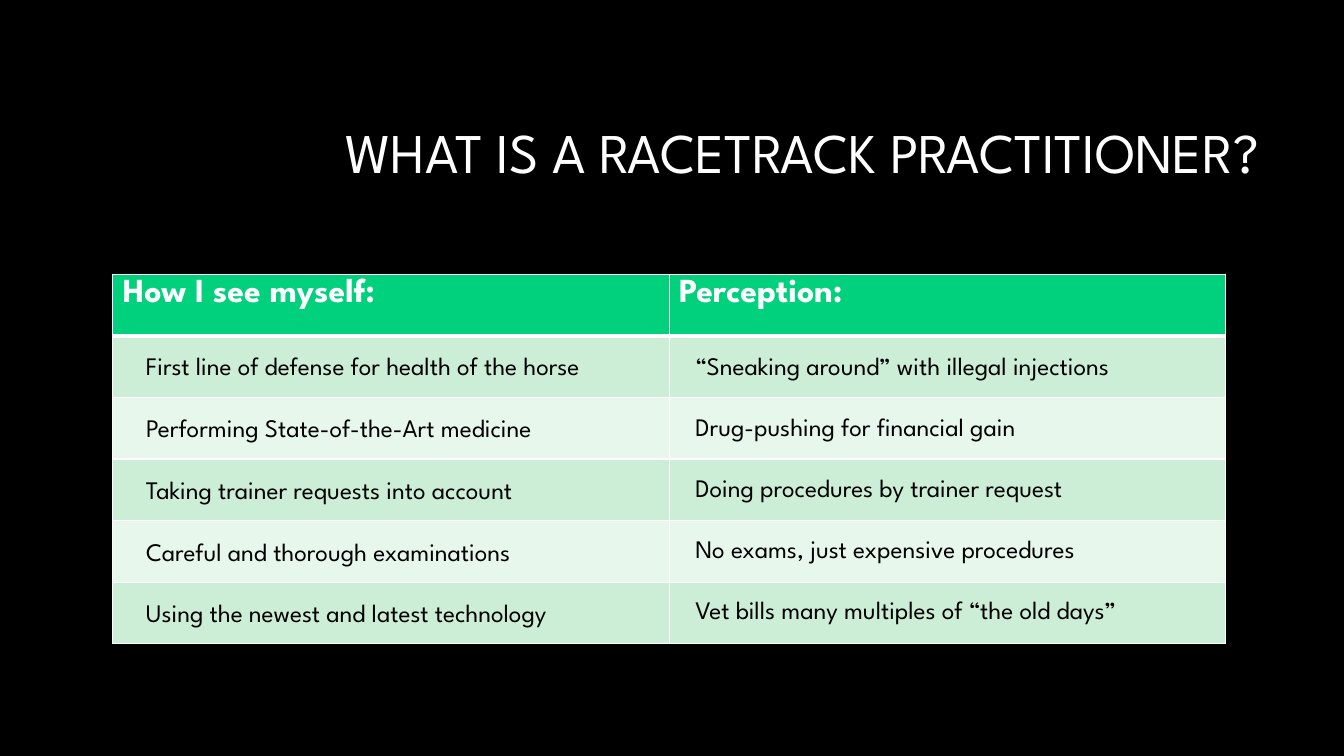
from pptx import Presentation
from pptx import util as u
from pptx.dml.color import RGBColor
from pptx.enum import text
from pptx.oxml import parse_xml
from pptx.oxml.ns import nsdecls

FONT = "League Spartan"
BLACK = RGBColor(0x00, 0x00, 0x00)
WHITE = RGBColor(0xFF, 0xFF, 0xFF)
GREEN = RGBColor(0x01, 0xD1, 0x7D)
BANDS = [RGBColor(0xCC, 0xEE, 0xD7), RGBColor(0xE7, 0xF7, 0xEC)]

HEADINGS = ["How I see myself:", "Perception:"]
ROWS = 6

# Each statement with the width of its label
MYSELF = [
    ("First line of defense for health of the horse", 379.5),
    ("Performing State-of-the-Art medicine", 339),
    ("Taking trainer requests into account", 329),
    ("Careful and thorough examinations", 328.5),
    ("Using the newest and latest technology", 363),
]
PERCEPTION = [
    ("“Sneaking around” with illegal injections", 366.5),
    ("Drug-pushing for financial gain", 284.5),
    ("Doing procedures by trainer request", 332.5),
    ("No exams, just expensive procedures", 340),
    ("Vet bills many multiples of “the old days”", 369.5),
]


def format_text(p, size, color, bold=False):
    for r in p.runs:
        f = r.font
        f.name, f.size, f.bold = FONT, u.Pt(size), bold
        f.color.rgb = color


def add_title(s, x, y, w, h):
    sp = s.shapes.title
    sp.left, sp.top, sp.width, sp.height = map(u.Pt, (x, y, w, h))
    tf = sp.text_frame
    tf.text = "WHAT IS A RACETRACK PRACTITIONER?"
    tf.word_wrap = True
    tf.vertical_anchor = text.MSO_ANCHOR.MIDDLE
    p = tf.paragraphs[0]
    p.alignment = text.PP_ALIGN.RIGHT
    p.line_spacing = 0.9
    format_text(p, 40, WHITE)


def style_cell(cell, fill, top, bottom):
    tcPr = cell._tc.get_or_add_tcPr()
    for side, width in (("L", 1), ("R", 1), ("T", top), ("B", bottom)):
        tcPr.append(parse_xml(
            f'<a:ln{side} {nsdecls("a")} w="{u.Pt(width)}"><a:solidFill>'
            f'<a:srgbClr val="{WHITE}"/></a:solidFill></a:ln{side}>'))
    cell.fill.solid()
    cell.fill.fore_color.rgb = fill


def add_labels(s, statements, x, y, pitch):
    for i, (statement, width) in enumerate(statements):
        sp = s.shapes.add_textbox(u.Pt(x), u.Pt(y + i * pitch), u.Pt(width), u.Pt(29))
        tf = sp.text_frame
        tf.text = statement
        tf.word_wrap = False
        tf.auto_size = text.MSO_AUTO_SIZE.SHAPE_TO_FIT_TEXT
        format_text(tf.paragraphs[0], 18, BLACK)


def add_comparison(s, x, y, w, h):
    # Banded grid with a green heading row
    table = s.shapes.add_table(ROWS, 2, u.Pt(x), u.Pt(y), u.Pt(w), u.Pt(h)).table
    for i, row in enumerate(table.rows):
        row.height = u.Pt(h / ROWS)
        for cell in row.cells:
            style_cell(cell, BANDS[(i - 1) % 2] if i else GREEN,
                       3 if i == 1 else 1, 1 if i else 3)
    for cell, heading in zip(table.rows[0].cells, HEADINGS):
        cell.text = heading
        format_text(cell.text_frame.paragraphs[0], 24, WHITE, True)

    # Statements laid over the rows
    add_labels(s, MYSELF, x + 16.6, y + 51.2, 44.1)
    add_labels(s, PERCEPTION, x + w / 2 + 11.6, y + 51.2, 43.5)


def main():
    prs = Presentation()
    prs.slide_width, prs.slide_height = u.Pt(960), u.Pt(540)
    s = prs.slides.add_slide(prs.slide_layouts[5])
    s.background.fill.solid()
    s.background.fill.fore_color.rgb = BLACK
    add_title(s, 228.2, 60.5, 678.2, 101.5)
    add_comparison(s, 80.6, 195.8, 794.8, 264.2)
    prs.save("out.pptx")


if __name__ == "__main__":
    main()
